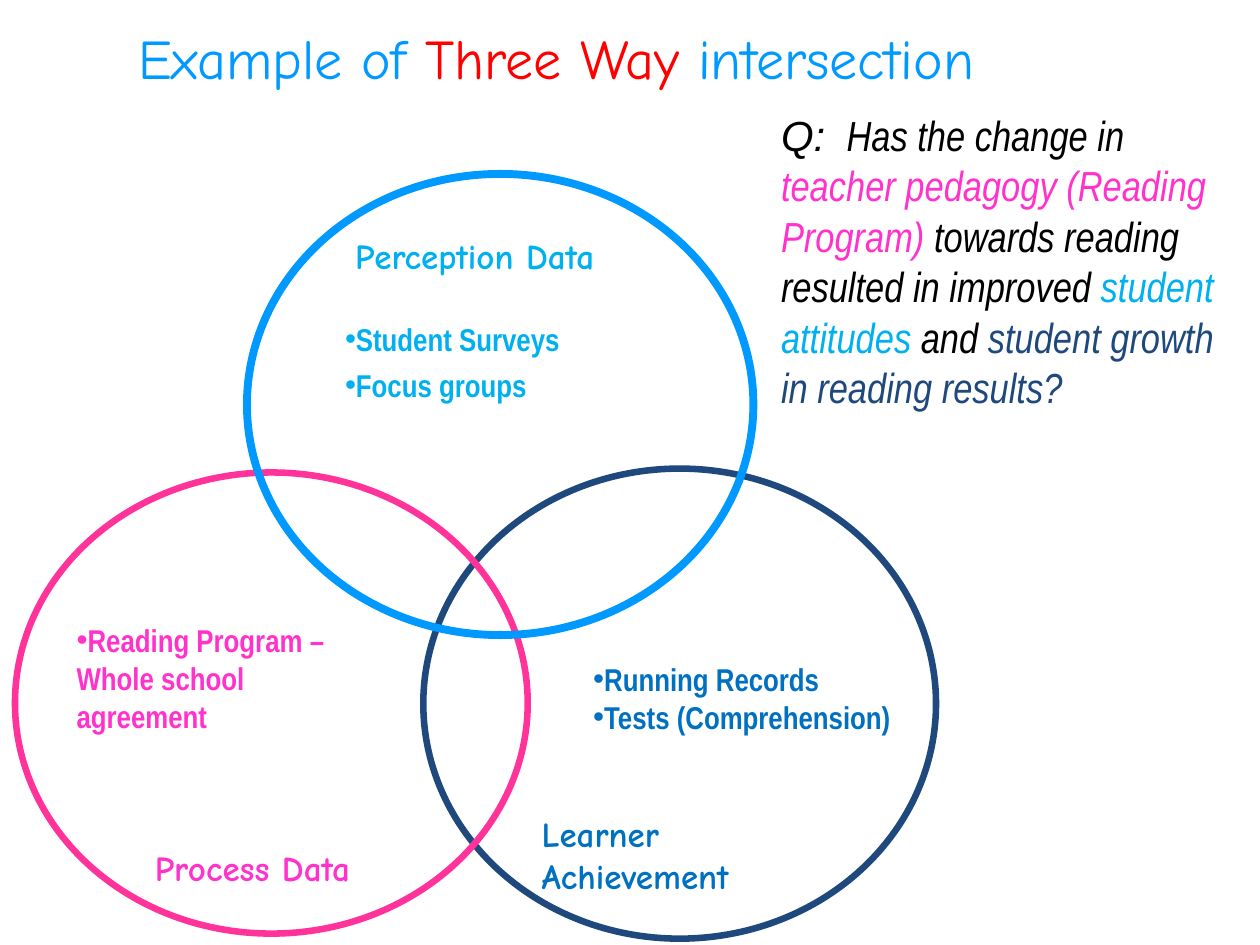
"""Build a three-way Venn diagram slide on reading data."""
from dataclasses import dataclass
from typing import Optional

import pptx
import pptx.dml.color
import pptx.enum.shapes
import pptx.enum.text
import pptx.oxml.ns
import pptx.util
from lxml import etree

Pt = pptx.util.Pt
RGBColor = pptx.dml.color.RGBColor
Align = pptx.enum.text.PP_ALIGN
Anchor = pptx.enum.text.MSO_ANCHOR
AutoSize = pptx.enum.text.MSO_AUTO_SIZE

SKY = RGBColor(0x00, 0x99, 0xFF)
CYAN = RGBColor(0x00, 0xB0, 0xF0)
BLUE = RGBColor(0x00, 0x70, 0xC0)
NAVY = RGBColor(0x1F, 0x49, 0x7D)
ROSE = RGBColor(0xFF, 0x33, 0x99)
PINK = RGBColor(0xFF, 0x33, 0xCC)
RED = RGBColor(0xFF, 0x00, 0x00)
BLACK = RGBColor(0x00, 0x00, 0x00)

TITLE = {"name": "Comic Neue", "size": Pt(32)}
HEADING = {"name": "Comic Neue", "size": Pt(20), "bold": True}
ITEM = {"name": "Arial Narrow", "size": Pt(18), "bold": True}
QUESTION = {"name": "Arial Narrow", "size": Pt(24), "italic": True}
QUESTION_MARK = QUESTION | {"name": "Arial"}


@dataclass(frozen=True)
class Box:
    left: float
    top: float
    width: float
    height: float

    def lengths(self) -> list:
        return [Pt(v) for v in (self.left, self.top, self.width, self.height)]


@dataclass(frozen=True)
class Circle:
    box: Box
    color: RGBColor
    weight: float


@dataclass(frozen=True)
class Run:
    text: str
    color: RGBColor
    style: dict


@dataclass(frozen=True)
class Label:
    box: Box
    paragraphs: list[list[Run]]
    bullet: bool = False
    space_before: float = 0
    wrap: bool = True
    align: Align = Align.LEFT
    anchor: Anchor = Anchor.TOP
    auto_size: Optional[AutoSize] = AutoSize.SHAPE_TO_FIT_TEXT


def lines(color: RGBColor, style: dict, *texts: str) -> list[list[Run]]:
    return [[Run(text, color, style)] for text in texts]


CIRCLES = [
    Circle(Box(241.9, 267.8, 293, 268.6), NAVY, 3.75),
    Circle(Box(8.6, 270, 293, 263.5), ROSE, 3.75),
    Circle(Box(141.1, 99.4, 289.4, 263.5), SKY, 4.5),
]

LABELS = [
    Label(Box(2.9, 0, 630, 65.5),
          [[Run("Example of ", SKY, TITLE), Run("Three Way ", RED, TITLE),
            Run("intersection", SKY, TITLE)]],
          align=Align.CENTER, anchor=Anchor.MIDDLE, auto_size=None),
    Label(Box(331.9, 373.7, 192.2, 94.3),
          lines(BLUE, ITEM, "Running Records", "Tests (Comprehension)"), bullet=True),
    Label(Box(36.7, 351.4, 172.8, 100.1),
          lines(PINK, ITEM, "Reading Program – Whole school agreement"),
          bullet=True, space_before=4.5),
    Label(Box(190.1, 179.3, 162.7, 56.2),
          lines(CYAN, ITEM, "Student Surveys", "Focus groups"),
          bullet=True, space_before=4.5),
    Label(Box(439.2, 59, 274.3, 181.4),
          [[Run("Q: ", BLACK, QUESTION_MARK),
            Run(" Has the change in ", BLACK, QUESTION),
            Run("teacher pedagogy (Reading Program) ", PINK, QUESTION),
            Run("towards reading resulted in improved ", BLACK, QUESTION),
            Run("student attitudes ", CYAN, QUESTION),
            Run("and ", BLACK, QUESTION),
            Run("student growth in reading results?", NAVY, QUESTION)]]),
    Label(Box(195.8, 130.3, 179.3, 31.7),
          lines(CYAN, HEADING, "Perception Data"), wrap=False),
    Label(Box(81.4, 480.2, 147.6, 31.7),
          lines(PINK, HEADING, "Process Data"), space_before=5, wrap=False),
    Label(Box(302.4, 460.8, 204.5, 55.4),
          lines(BLUE, HEADING, "Learner", "Achievement")),
]


def draw_circle(s, circle: Circle) -> None:
    oval = pptx.enum.shapes.MSO_SHAPE.OVAL
    sp = s.shapes.add_shape(oval, *circle.box.lengths())
    sp.shadow.inherit = False
    sp.fill.background()
    sp.line.color.rgb = circle.color
    sp.line.width = Pt(circle.weight)


def add_bullet(p) -> None:
    pPr = p._p.get_or_add_pPr()
    etree.SubElement(pPr, pptx.oxml.ns.qn("a:buFont")).set("typeface", "Arial")
    etree.SubElement(pPr, pptx.oxml.ns.qn("a:buChar")).set("char", "•")


def draw_label(s, label: Label) -> None:
    tf = s.shapes.add_textbox(*label.box.lengths()).text_frame
    frame = {"word_wrap": label.wrap, "vertical_anchor": label.anchor,
             "auto_size": label.auto_size}
    for name, value in frame.items():
        setattr(tf, name, value)
    for i, runs in enumerate(label.paragraphs):
        p = tf.add_paragraph() if i else tf.paragraphs[0]
        p.alignment = label.align
        p.space_before = Pt(label.space_before)
        if label.bullet:
            add_bullet(p)
        for run in runs:
            r = p.add_run()
            r.text = run.text
            r.font.color.rgb = run.color
            for name, value in run.style.items():
                setattr(r.font, name, value)


def main() -> None:
    prs = pptx.Presentation()
    prs.slide_width, prs.slide_height = Pt(720), Pt(540)
    s = prs.slides.add_slide(prs.slide_layouts[6])
    for circle in CIRCLES:
        draw_circle(s, circle)
    for label in LABELS:
        draw_label(s, label)
    prs.save("out.pptx")


if __name__ == "__main__":
    main()
